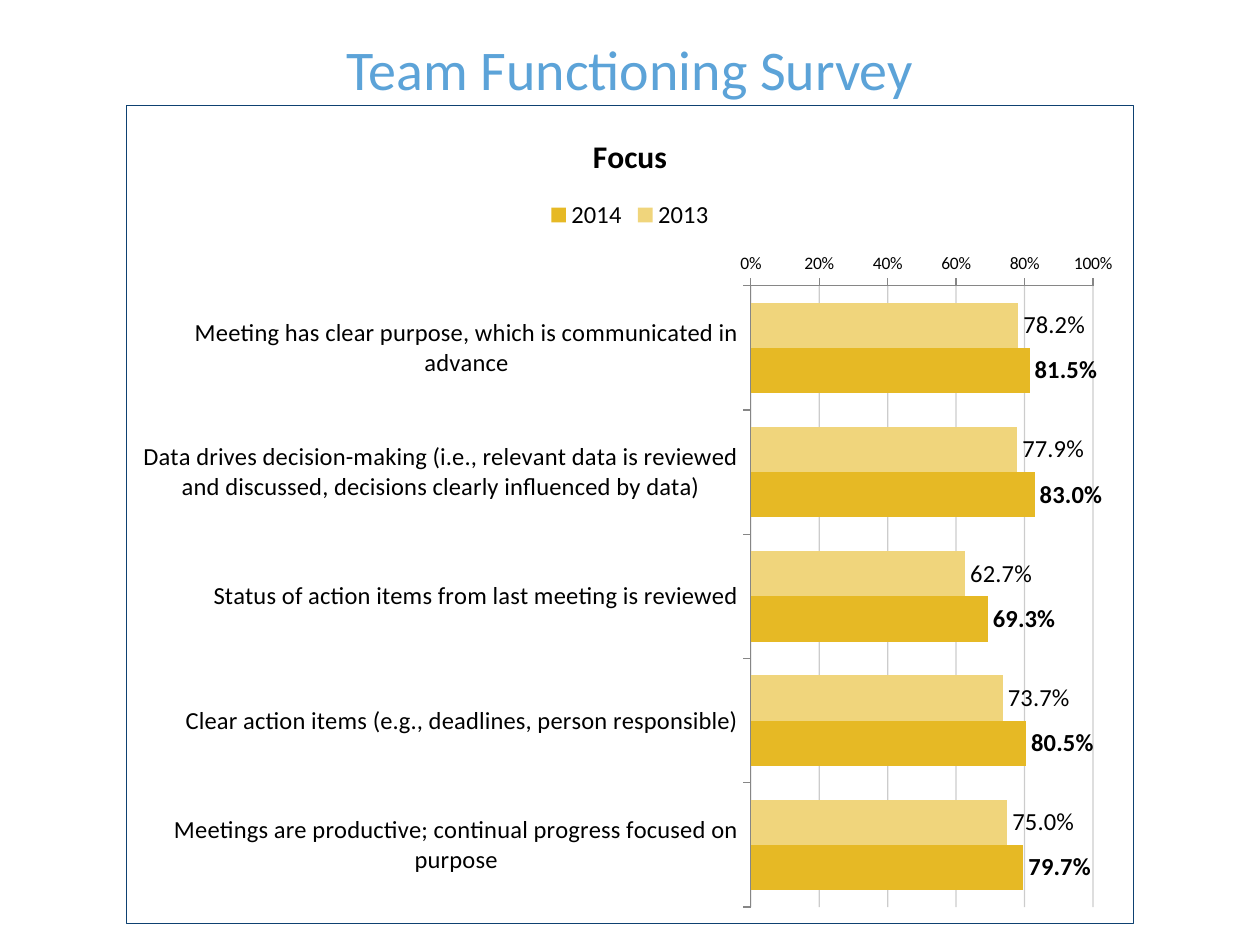
from dataclasses import dataclass

import pptx
import pptx.chart.data
import pptx.dml.color
import pptx.enum.chart
import pptx.enum.text
import pptx.oxml
import pptx.oxml.ns
import pptx.util
from pptx.util import Cm

NAMESPACES = pptx.oxml.ns.nsdecls("c", "a")


@dataclass(frozen=True)
class Theme:
    font: str = "Calibri"
    heading: str = "5CA3D8"
    text: str = "000000"
    border: str = "0E4171"
    axis: str = "868686"
    background: str = "FFFFFF"
    heading_size: int = 32
    chart_title_size: int = 18
    label_size: int = 14
    tick_size: int = 10
    line_width: float = 0.75


@dataclass(frozen=True)
class SurveyYear:
    name: str
    shares: tuple[float, ...]
    color: str
    bold: bool


THEME = Theme()
STATEMENTS = (
    "Meeting has clear purpose, which is communicated in advance",
    "Data drives decision-making (i.e., relevant data is reviewed and discussed, "
    "decisions clearly influenced by data)",
    "Status of action items from last meeting is reviewed",
    "Clear action items (e.g., deadlines, person responsible)",
    "Meetings are productive; continual progress focused on purpose",
)
YEARS = (
    SurveyYear("2013", (0.782, 0.779, 0.627, 0.737, 0.75), "F0D57C", False),
    SurveyYear("2014", (0.815, 0.83, 0.693, 0.805, 0.797), "E6B925", True),
)


def rgb(color: str) -> pptx.dml.color.RGBColor:
    return pptx.dml.color.RGBColor.from_string(color)


def style_font(font, size: float, color: str = THEME.text, bold: bool = False) -> None:
    font.name = THEME.font
    font.size = pptx.util.Pt(size)
    font.bold = bold
    font.color.rgb = rgb(color)


def style_line(line, color: str) -> None:
    line.color.rgb = rgb(color)
    line.width = pptx.util.Pt(THEME.line_width)


def add_heading(page, text: str) -> None:
    box = page.shapes.add_textbox(Cm(1.27), Cm(0.43), Cm(22.86), Cm(1.9))
    frame = box.text_frame
    frame.text = text
    frame.word_wrap = True
    frame.vertical_anchor = pptx.enum.text.MSO_ANCHOR.MIDDLE
    para = frame.paragraphs[0]
    para.alignment = pptx.enum.text.PP_ALIGN.CENTER
    style_font(para.runs[0].font, THEME.heading_size, THEME.heading)


def style_axes(chart) -> None:
    statements, shares = chart.category_axis, chart.value_axis
    for axis, size in ((statements, THEME.label_size), (shares, THEME.tick_size)):
        axis.major_tick_mark = pptx.enum.chart.XL_TICK_MARK.OUTSIDE
        axis.minor_tick_mark = pptx.enum.chart.XL_TICK_MARK.NONE
        style_font(axis.tick_labels.font, size)
        style_line(axis.format.line, THEME.axis)
    statements.reverse_order = True
    statements.has_major_gridlines = False

    shares.minimum_scale, shares.maximum_scale = 0, 1
    shares.major_unit = 0.2
    shares.tick_labels.number_format = "0%"
    shares.tick_labels.number_format_is_linked = False
    shares.has_major_gridlines = True
    grid = shares.major_gridlines.format.line
    style_line(grid, THEME.text)
    grid_color = grid.fill._xPr.find(".//" + pptx.oxml.ns.qn("a:srgbClr"))
    grid_color.append(pptx.oxml.parse_xml(f'<a:alpha {NAMESPACES} val="20000"/>'))


def style_series(series, year: SurveyYear) -> None:
    series.format.fill.solid()
    series.format.fill.fore_color.rgb = rgb(year.color)
    labels = series.data_labels
    labels.show_value = True
    labels.number_format = "0.0%"
    labels.number_format_is_linked = False
    labels.position = pptx.enum.chart.XL_LABEL_POSITION.OUTSIDE_END
    style_font(labels.font, THEME.label_size, bold=year.bold)


def set_plot_area(chart, x: float, y: float, w: float, h: float) -> None:
    plot_area = chart._chartSpace.chart.plotArea
    for old in plot_area.findall(pptx.oxml.ns.qn("c:layout")):
        plot_area.remove(old)
    places = "".join(f'<c:{key} val="{value}"/>' for key, value in
                     (("x", x), ("y", y), ("w", w), ("h", h)))
    plot_area.insert(0, pptx.oxml.parse_xml(
        f'<c:layout {NAMESPACES}><c:manualLayout><c:layoutTarget val="inner"/>'
        f'<c:xMode val="edge"/><c:yMode val="edge"/>{places}'
        '</c:manualLayout></c:layout>'))


def set_chart_frame(chart) -> None:
    frame = pptx.oxml.parse_xml(
        f'<c:spPr {NAMESPACES}>'
        f'<a:solidFill><a:srgbClr val="{THEME.background}"/></a:solidFill>'
        f'<a:ln w="{pptx.util.Pt(THEME.line_width)}"><a:solidFill>'
        f'<a:srgbClr val="{THEME.border}"/></a:solidFill></a:ln></c:spPr>')
    chart._chartSpace.chart.addnext(frame)


def add_survey_chart(page, title: str) -> None:
    data = pptx.chart.data.CategoryChartData(number_format="0.0%")
    data.categories = STATEMENTS
    for year in YEARS:
        data.add_series(year.name, year.shares)
    chart = page.shapes.add_chart(
        pptx.enum.chart.XL_CHART_TYPE.BAR_CLUSTERED,
        Cm(2.54), Cm(2.12), Cm(20.32), Cm(16.51), data).chart
    style_font(chart.font, THEME.tick_size)

    # Title and legend
    chart.has_title = True
    chart.chart_title.include_in_layout = False
    chart.chart_title.text_frame.text = title
    span = chart.chart_title.text_frame.paragraphs[0].runs[0]
    style_font(span.font, THEME.chart_title_size, bold=True)
    chart.has_legend = True
    chart.legend.position = pptx.enum.chart.XL_LEGEND_POSITION.TOP
    chart.legend.include_in_layout = False
    style_font(chart.legend.font, THEME.label_size)

    # Bars, axes and frame
    plot = chart.plots[0]
    plot.gap_width = 75
    plot.overlap = 0
    plot.vary_by_categories = False
    for series, year in zip(plot.series, YEARS):
        style_series(series, year)
    style_axes(chart)
    set_plot_area(chart, 0.62, 0.22, 0.34, 0.76)
    set_chart_frame(chart)


def main() -> None:
    deck = pptx.Presentation()
    deck.slide_width, deck.slide_height = Cm(25.4), Cm(19.05)
    page = deck.slides.add_slide(deck.slide_layouts[6])
    add_heading(page, "Team Functioning Survey")
    add_survey_chart(page, "Focus")
    deck.save("out.pptx")


if __name__ == "__main__":
    main()
